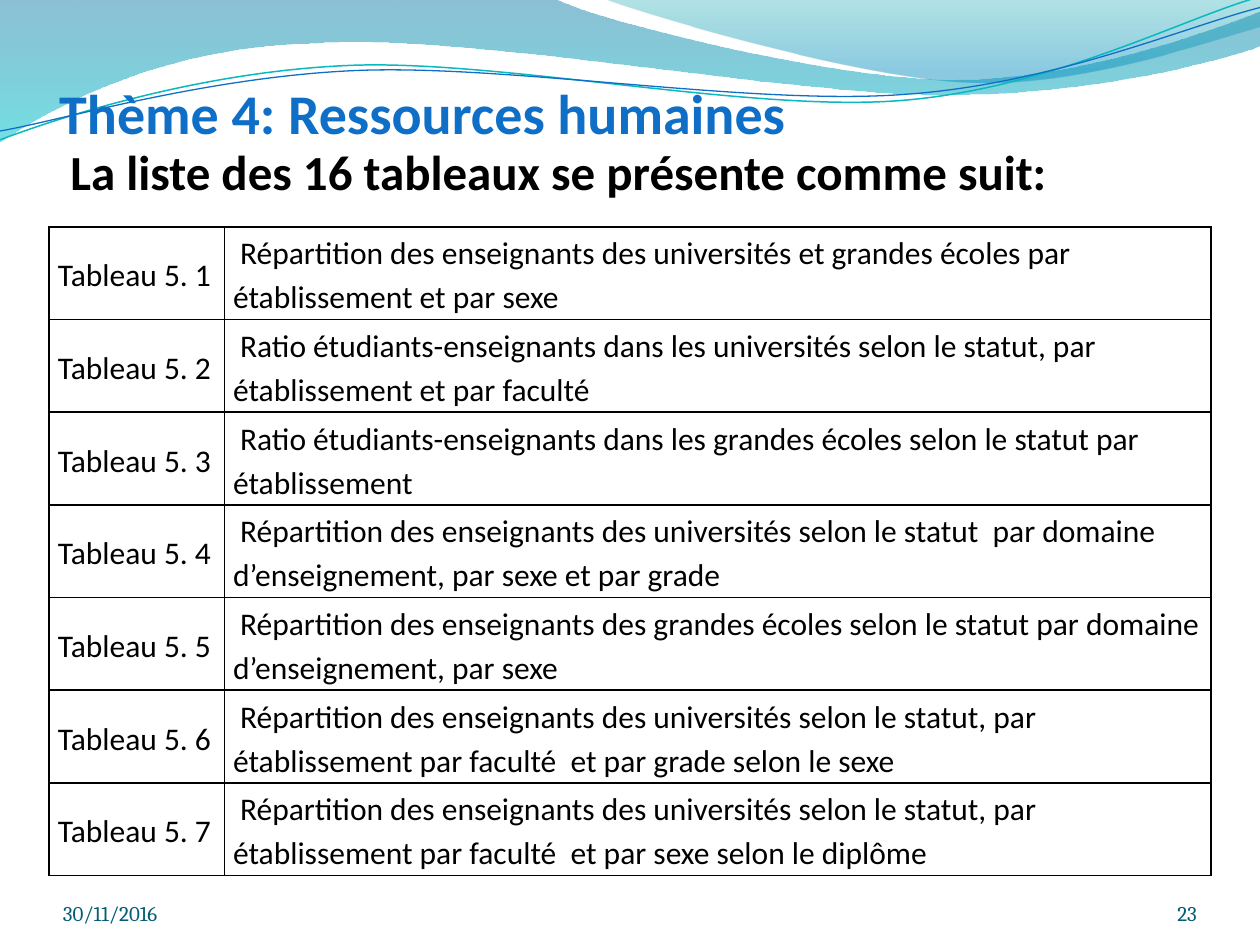
from lxml import etree
from pptx import Presentation, util as u
from pptx.dml.color import RGBColor
from pptx.enum import text
from pptx.oxml.ns import qn

Inches, Pt = u.Inches, u.Pt
BLUE, BLACK, TEAL, FOOT = "0F6FC6", "000000", "0AB8BF", "045D75"

BANDS = [
    ((0, 0), [
        [(4.4, -0.01)],
        [(4.76, 0.17), (6.64, 0.63), (7.58, 0.63)],
        [(8.53, 0.63), (9.58, 0.26), (10, 0.09)],
        [(10.01, 0.36)],
        [(9.83, 0.44), (8.7, 0.76), (7.46, 0.75)],
        [(6.22, 0.75), (3.82, 0.28), (2.57, 0.34)],
        [(1.29, 0.36), (0.46, 0.83), (-0.01, 1.13)],
    ], [(0, "0074A1", 45), (1, "00C6CF", 55)]),
    ((4.79, -0.01), [
        [(5.09, 0.11), (6.82, 0.62), (7.69, 0.65)],
        [(8.56, 0.69), (9.61, 0.32), (10, 0.21)],
        [(10, 0)],
    ], [(0, "00A1A9", 30), (0.8, "008BBF", 45)]),
]
WAVES = [
    ((0, 1.11), [
        [(0.48, 0.93), (1.58, 0.57), (2.77, 0.52)],
        [(3.95, 0.47), (5.93, 0.89), (7.13, 0.8)],
        [(8.33, 0.71), (9.38, 0.15), (9.98, -0.02)],
    ], TEAL, 0.85),
    ((0, 1.04), [
        [(0.47, 0.96), (1.64, 0.61), (2.83, 0.56)],
        [(4.03, 0.51), (5.97, 0.84), (7.17, 0.75)],
        [(8.36, 0.67), (9.41, 0.21), (10, 0.06)],
    ], BLUE, 0.75),
]
ROWS = [
    "Répartition des enseignants des universités et grandes écoles par établissement et par sexe",
    "Ratio étudiants-enseignants dans les universités selon le statut, par établissement et par faculté",
    "Ratio étudiants-enseignants dans les grandes écoles selon le statut par établissement",
    "Répartition des enseignants des universités selon le statut  par domaine d’enseignement, par sexe et par grade",
    "Répartition des enseignants des grandes écoles selon le statut par domaine d’enseignement, par sexe",
    "Répartition des enseignants des universités selon le statut, par établissement par faculté  et par grade selon le sexe",
    "Répartition des enseignants des universités selon le statut, par établissement par faculté  et par sexe selon le diplôme",
]


def rgb(value):
    return RGBColor.from_string(value)


def style(p, font, size, color, bold=False, align=text.PP_ALIGN.LEFT):
    p.alignment = align
    p.font.name, p.font.size, p.font.bold = font, Pt(size), bold
    p.font.color.rgb = rgb(color)


def add_outline(s, start, segments, close):
    builder = s.shapes.build_freeform(*map(Inches, start))
    points = [(Inches(x), Inches(y)) for segment in segments for x, y in segment]
    builder.add_line_segments(points, close=close)
    sp = builder.convert_to_shape()
    sp.shadow.inherit = False
    lines = iter(list(sp._element.iter(qn("a:lnTo"))))
    for segment in segments:
        first, *rest = [next(lines) for _ in segment]
        if rest:
            curve = etree.Element(qn("a:cubicBezTo"))
            first.addprevious(curve)
            for line in (first, *rest):
                curve.append(line[0])
                line.getparent().remove(line)
    return sp


def add_header(s):
    for start, segments, stops in BANDS:
        sp = add_outline(s, start, segments, True)
        sp.line.fill.background()
        sp.fill.gradient()
        sp.fill.gradient_angle = 270
        for stop, (position, color, _) in zip(sp.fill.gradient_stops, stops):
            stop.position, stop.color.rgb = position, rgb(color)
        colors = sp._element.spPr.iter(qn("a:srgbClr"))
        for clr, (_, _, opacity) in zip(list(colors), stops):
            etree.SubElement(clr, qn("a:alpha"), val=str(opacity * 1000))
    for start, segments, color, width in WAVES:
        sp = add_outline(s, start, segments, False)
        sp.fill.background()
        sp.line.color.rgb = rgb(color)
        sp.line.width = Pt(width)


def fill_text(sp, box, content, top=0, **font):
    sp.left, sp.top, sp.width, sp.height = map(Inches, box)
    tf = sp.text_frame
    tf.word_wrap, tf.auto_size = True, text.MSO_AUTO_SIZE.NONE
    tf.vertical_anchor = text.MSO_ANCHOR.BOTTOM
    tf.margin_left = tf.margin_right = tf.margin_bottom = 0
    tf.margin_top = Inches(top)
    tf.text = content
    style(tf.paragraphs[0], **font)


def add_title(s, box, content):
    title = s.shapes.title
    s.shapes._spTree.append(title._element)
    fill_text(title, box, content, 0.05, font="Calibri", size=32, color=BLUE, bold=True)


def add_text(s, box, content, **options):
    fill_text(s.shapes.add_textbox(*map(Inches, box)), box, content, **options)


def add_borders(cell):
    pr = cell._tc.get_or_add_tcPr()
    for i, side in enumerate(("lnL", "lnR", "lnT", "lnB")):
        ln = etree.Element(qn("a:" + side), w=str(Pt(1)))
        fill = etree.SubElement(ln, qn("a:solidFill"))
        etree.SubElement(fill, qn("a:srgbClr"), val=BLACK)
        pr.insert(i, ln)


def add_list_table(s, box, label_width):
    table = s.shapes.add_table(len(ROWS), 2, *map(Inches, box)).table
    table.first_row = table.horz_banding = False
    table.columns[0].width = Inches(label_width)
    table.columns[1].width = Inches(box[2] - label_width)
    for i, description in enumerate(ROWS):
        for cell, content in zip(table.rows[i].cells, (f"Tableau 5. {i + 1}", " " + description)):
            cell.text = content
            cell.fill.background()
            cell.vertical_anchor = text.MSO_ANCHOR.MIDDLE
            cell.margin_left = cell.margin_right = Inches(0.07)
            cell.margin_top = cell.margin_bottom = 0
            p = cell.text_frame.paragraphs[0]
            p.line_spacing = 1.15
            style(p, "Calibri", 18, BLACK)
            add_borders(cell)


def main():
    prs = Presentation()
    prs.slide_width, prs.slide_height = Inches(10), Inches(7.5)
    s = prs.slides.add_slide(prs.slide_layouts[5])
    add_header(s)
    add_title(s, (0.47, 0.55, 9, 0.61), "Thème 4: Ressources humaines")
    add_text(s, (0.56, 1.05, 9, 0.54), "La liste des 16 tableaux se présente comme suit:",
             top=0.05, font="Calibri", size=28, color=BLACK, bold=True)
    add_list_table(s, (0.39, 1.8, 9.22, 5.15), 1.39)
    footer = dict(font="Cambria", size=12, color=FOOT)
    add_text(s, (8.67, 6.95, 0.83, 0.4), "23", align=text.PP_ALIGN.RIGHT, **footer)
    add_text(s, (0.5, 6.95, 2.33, 0.4), "30/11/2016", **footer)
    prs.save("out.pptx")


if __name__ == "__main__":
    main()
